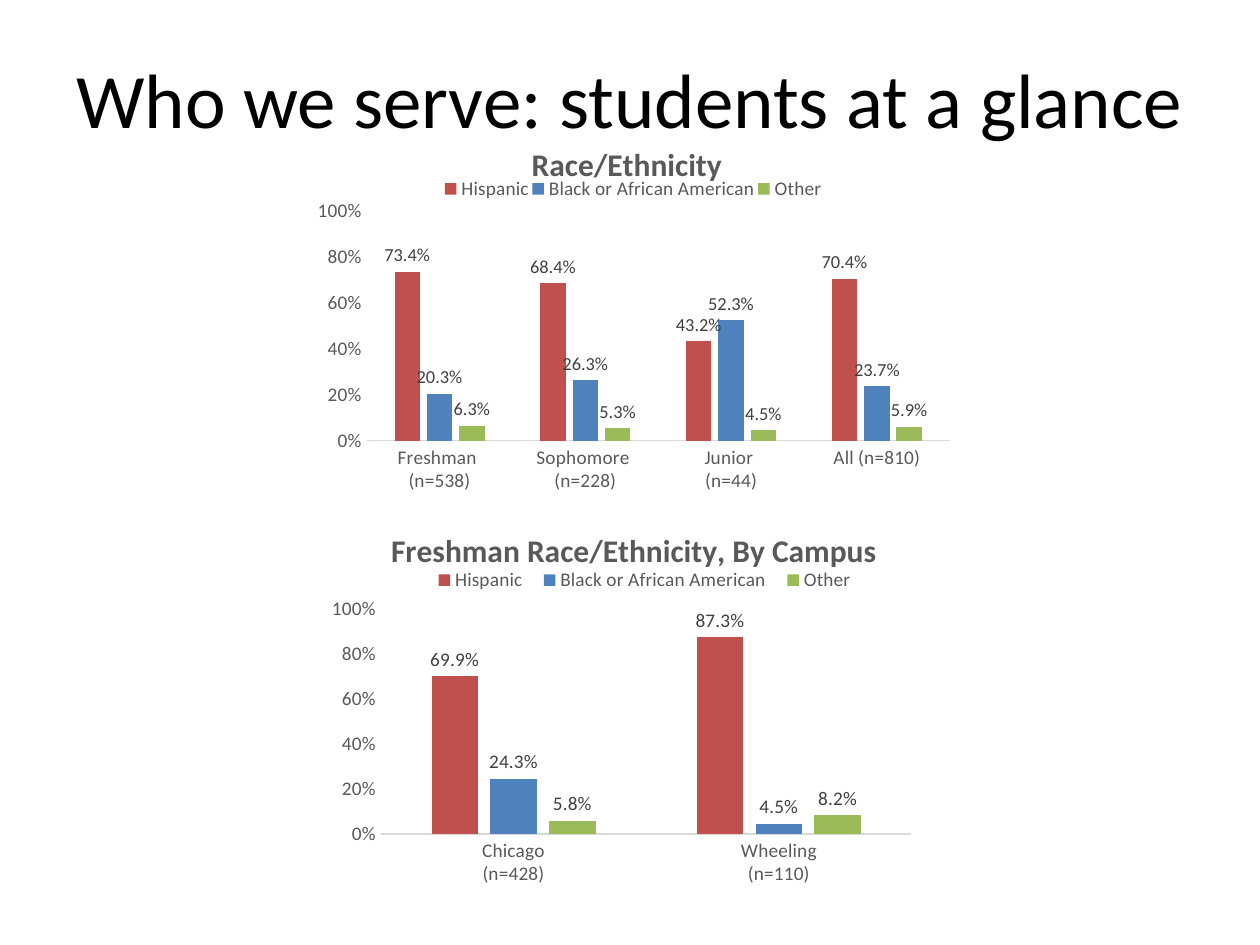
from dataclasses import dataclass

from lxml import etree
from pptx import Presentation
from pptx.chart.data import CategoryChartData
from pptx.dml.color import RGBColor
from pptx.enum import chart as ch, text as tx
from pptx.oxml import ns
from pptx.util import Inches, Pt

FONT = "Calibri"
BLACK = RGBColor(0x00, 0x00, 0x00)
GRAY = RGBColor(0x59, 0x59, 0x59)
LABEL_GRAY = RGBColor(0x40, 0x40, 0x40)
AXIS_GRAY = RGBColor(0xD9, 0xD9, 0xD9)
GROUP_COLORS = {
    "Hispanic": RGBColor(0xC0, 0x50, 0x4D),
    "Black or African American": RGBColor(0x4F, 0x81, 0xBD),
    "Other": RGBColor(0x9B, 0xBB, 0x59),
}


@dataclass(frozen=True)
class EthnicityChart:
    """Box is in inches; the layouts are fractions of the chart's size."""
    heading: str
    box: tuple[float, ...]
    classes: tuple[str, ...]
    shares: tuple[tuple[float, ...], ...]
    label_size: float
    heading_layout: tuple[float, ...]
    legend_layout: tuple[float, ...]
    plot_layout: tuple[float, ...]


CHARTS = (
    EthnicityChart(
        "Race/Ethnicity", (2.42, 0.96, 5.16, 3.17),
        ("Freshman \n(n=538)", "Sophomore \n(n=228)", "Junior \n(n=44)", "All (n=810)"),
        ((0.734, 0.684, 0.432, 0.704),
         (0.203, 0.263, 0.523, 0.237),
         (0.063, 0.053, 0.045, 0.059)),
        10.5, (0.34, 0.04), (0.21, 0.14, 0.59, 0.06), (0.095, 0.225, 0.897, 0.576)),
    EthnicityChart(
        "Freshman Race/Ethnicity, By Campus", (2.5, 4.12, 5.08, 3),
        ("Chicago\n(n=428)", "Wheeling\n(n=110)"),
        ((0.699, 0.873), (0.243, 0.045), (0.058, 0.082)),
        11, (0.11, 0.01), (0.17, 0.13, 0.69, 0.06), (0.103, 0.237, 0.829, 0.596)),
)


def style_font(font, size: float, color: RGBColor, bold: bool = False) -> None:
    font.name, font.size, font.bold = FONT, Pt(size), bold
    font.color.rgb = color


def write(frame, content: str, *, size: float, color: RGBColor, bold: bool = False) -> None:
    paragraph = frame.paragraphs[0]
    paragraph.alignment = tx.PP_ALIGN.CENTER
    run = paragraph.add_run()
    run.text = content
    style_font(run.font, size, color, bold)


def set_layout(parent, fractions: tuple[float, ...], after: str = "", inner: bool = False) -> None:
    """Place a chart part by hand, with its layout following the named child."""
    for old in parent.findall(ns.qn("c:layout")):
        parent.remove(old)
    layout = etree.Element(ns.qn("c:layout"))
    manual = etree.SubElement(layout, ns.qn("c:manualLayout"))
    settings = [("layoutTarget", "inner")] if inner else []
    settings += [("xMode", "edge"), ("yMode", "edge")]
    settings += zip("xywh", map(str, fractions))
    for tag, value in settings:
        etree.SubElement(manual, ns.qn(f"c:{tag}")).set("val", value)
    if after:
        parent.find(ns.qn(after)).addnext(layout)
    else:
        parent.insert(0, layout)


def style_axes(chart) -> None:
    for axis in (chart.category_axis, chart.value_axis):
        axis.major_tick_mark = axis.minor_tick_mark = ch.XL_TICK_MARK.NONE
        axis.has_major_gridlines = False
        style_font(axis.tick_labels.font, 11, GRAY)
    category_line = chart.category_axis.format.line
    category_line.color.rgb, category_line.width = AXIS_GRAY, Pt(0.75)
    values = chart.value_axis
    values.minimum_scale, values.maximum_scale, values.major_unit = 0, 1, 0.2
    values.tick_labels.number_format = "0%"
    values.tick_labels.number_format_is_linked = False
    values.format.line.fill.background()


def style_columns(plot, label_size: float) -> None:
    plot.gap_width, plot.overlap, plot.vary_by_categories = 219, -27, False
    for series in plot.series:
        series.format.fill.solid()
        series.format.fill.fore_color.rgb = GROUP_COLORS[series.name]
        labels = series.data_labels
        labels.show_value = True
        labels.position = ch.XL_LABEL_POSITION.OUTSIDE_END
        labels.number_format, labels.number_format_is_linked = "0.0%", False
        style_font(labels.font, label_size, LABEL_GRAY)


def add_ethnicity_chart(slide, item: EthnicityChart) -> None:
    data = CategoryChartData(number_format="0.0%")
    data.categories = item.classes
    for group, shares in zip(GROUP_COLORS, item.shares):
        data.add_series(group, shares)
    chart = slide.shapes.add_chart(
        ch.XL_CHART_TYPE.COLUMN_CLUSTERED, *map(Inches, item.box), data).chart
    style_font(chart.font, 10, BLACK)

    chart.has_title = True
    write(chart.chart_title.text_frame, item.heading, size=18, color=GRAY, bold=True)
    chart.has_legend = True
    chart.legend.position = ch.XL_LEGEND_POSITION.BOTTOM
    chart.legend.include_in_layout = False
    style_font(chart.legend.font, 11, GRAY)
    style_axes(chart)
    style_columns(chart.plots[0], item.label_size)

    root = chart.element.find(ns.qn("c:chart"))
    set_layout(root.find(ns.qn("c:title")), item.heading_layout, after="c:tx")
    set_layout(root.find(ns.qn("c:legend")), item.legend_layout, after="c:legendPos")
    set_layout(root.find(ns.qn("c:plotArea")), item.plot_layout, inner=True)


def main() -> None:
    deck = Presentation()
    deck.slide_width, deck.slide_height = Inches(10), Inches(7.5)
    slide = deck.slides.add_slide(deck.slide_layouts[6])
    title = slide.shapes.add_textbox(*map(Inches, (0.5, 0.3, 9, 0.95))).text_frame
    title.word_wrap = True
    title.vertical_anchor = tx.MSO_ANCHOR.MIDDLE
    write(title, "Who we serve: students at a glance", size=44, color=BLACK)
    for item in CHARTS:
        add_ethnicity_chart(slide, item)
    deck.save("out.pptx")


if __name__ == "__main__":
    main()
